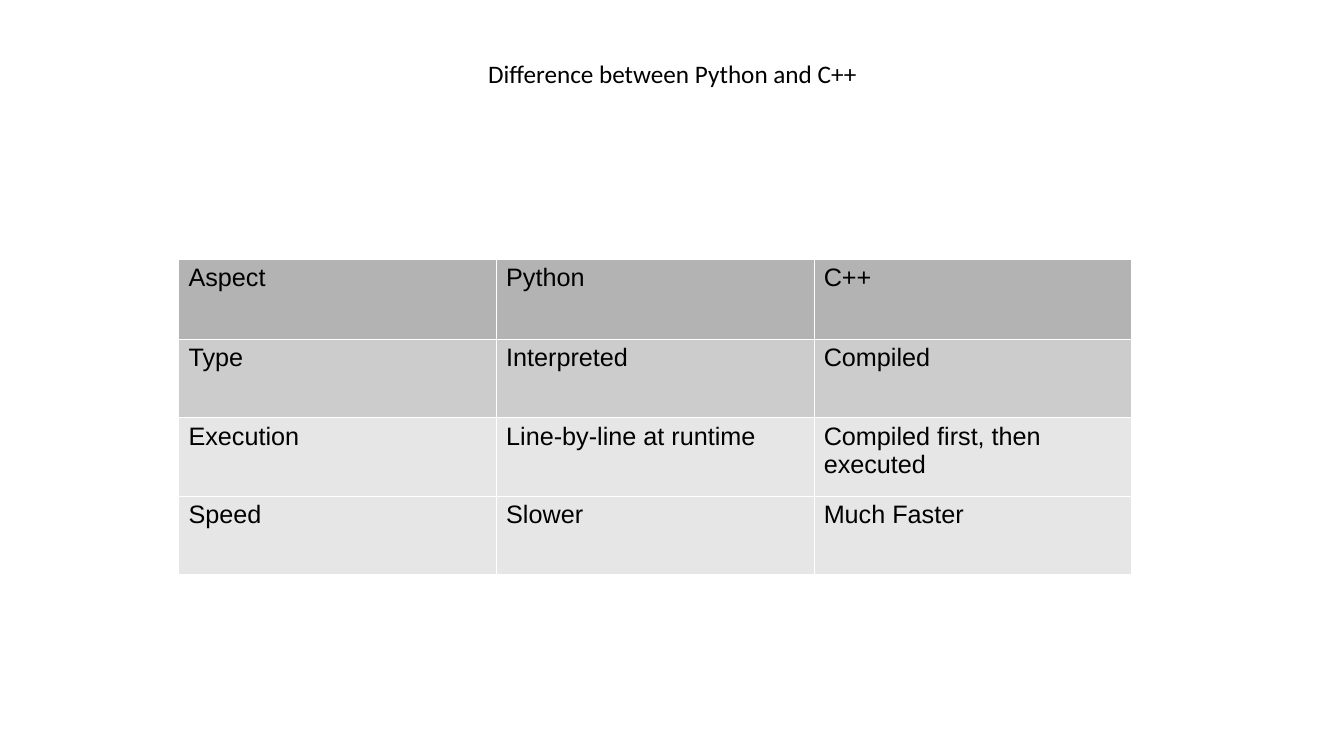
import lxml.etree
import pptx
import pptx.dml.color
import pptx.enum.text
import pptx.oxml.ns
import pptx.util

Inches = pptx.util.Inches
COLORS = {"text": "000000", "border": "FFFFFF", "header": "B3B3B3",
          "type": "CCCCCC", "body": "E6E6E6"}


class SlideBuilder:
    """Holds the text style and the slide, and adds elements to it."""

    def __init__(self, slide, size=18):
        self.slide = slide
        self.size = pptx.util.Pt(size)

    def color(self, name):
        return pptx.dml.color.RGBColor.from_string(COLORS[name])

    def add_text(self, paragraph, wording, font):
        run = paragraph.add_run()
        run.text = wording
        run.font.name = font
        run.font.size = self.size
        run.font.color.rgb = self.color("text")

    def title(self, wording, left, top, width, height):
        frame = self.slide.shapes.add_textbox(
            Inches(left), Inches(top), Inches(width), Inches(height)).text_frame
        frame.word_wrap = True
        frame.margin_left = frame.margin_right = 0
        frame.margin_top = frame.margin_bottom = 0
        frame.vertical_anchor = pptx.enum.text.MSO_ANCHOR.MIDDLE
        heading = frame.paragraphs[0]
        heading.alignment = pptx.enum.text.PP_ALIGN.CENTER
        self.add_text(heading, wording, "Calibri")

    def borders(self, cell, width=0.06):
        qn = pptx.oxml.ns.qn
        properties = cell._tc.get_or_add_tcPr()
        for side in ("a:lnL", "a:lnR", "a:lnT", "a:lnB"):
            line = lxml.etree.SubElement(
                properties, qn(side), w=str(int(pptx.util.Pt(width))))
            fill = lxml.etree.SubElement(line, qn("a:solidFill"))
            lxml.etree.SubElement(fill, qn("a:srgbClr"), val=COLORS["border"])

    def table(self, rows, fills, heights, left, top, width):
        columns = len(rows[0])
        table = self.slide.shapes.add_table(
            len(rows), columns, Inches(left), Inches(top),
            Inches(width), Inches(sum(heights))).table
        table.first_row = table.horz_banding = False
        for column in table.columns:
            column.width = Inches(width / columns)
        for row, wordings, fill, height in zip(table.rows, rows, fills, heights):
            row.height = Inches(height)
            for cell, wording in zip(row.cells, wordings):
                self.borders(cell)
                cell.fill.solid()
                cell.fill.fore_color.rgb = self.color(fill)
                cell.margin_left = cell.margin_right = Inches(0.1)
                cell.margin_top = cell.margin_bottom = Inches(0.05)
                self.add_text(cell.text_frame.paragraphs[0], wording, "Arial")


def main():
    presentation = pptx.Presentation()
    presentation.slide_width = Inches(13.33)
    presentation.slide_height = Inches(7.5)
    builder = SlideBuilder(
        presentation.slides.add_slide(presentation.slide_layouts[6]))
    builder.title("Difference between Python and C++", 1.18, 0.11, 10.98, 1.23)
    comparison = [
        ("Aspect", "Python", "C++"),
        ("Type", "Interpreted", "Compiled"),
        ("Execution", "Line-by-line at runtime", "Compiled first, then executed"),
        ("Speed", "Slower", "Much Faster"),
    ]
    builder.table(comparison, ("header", "type", "body", "body"),
                  (0.79, 0.78, 0.78, 0.78), 1.77, 2.57, 9.45)
    presentation.save("out.pptx")


if __name__ == "__main__":
    main()
